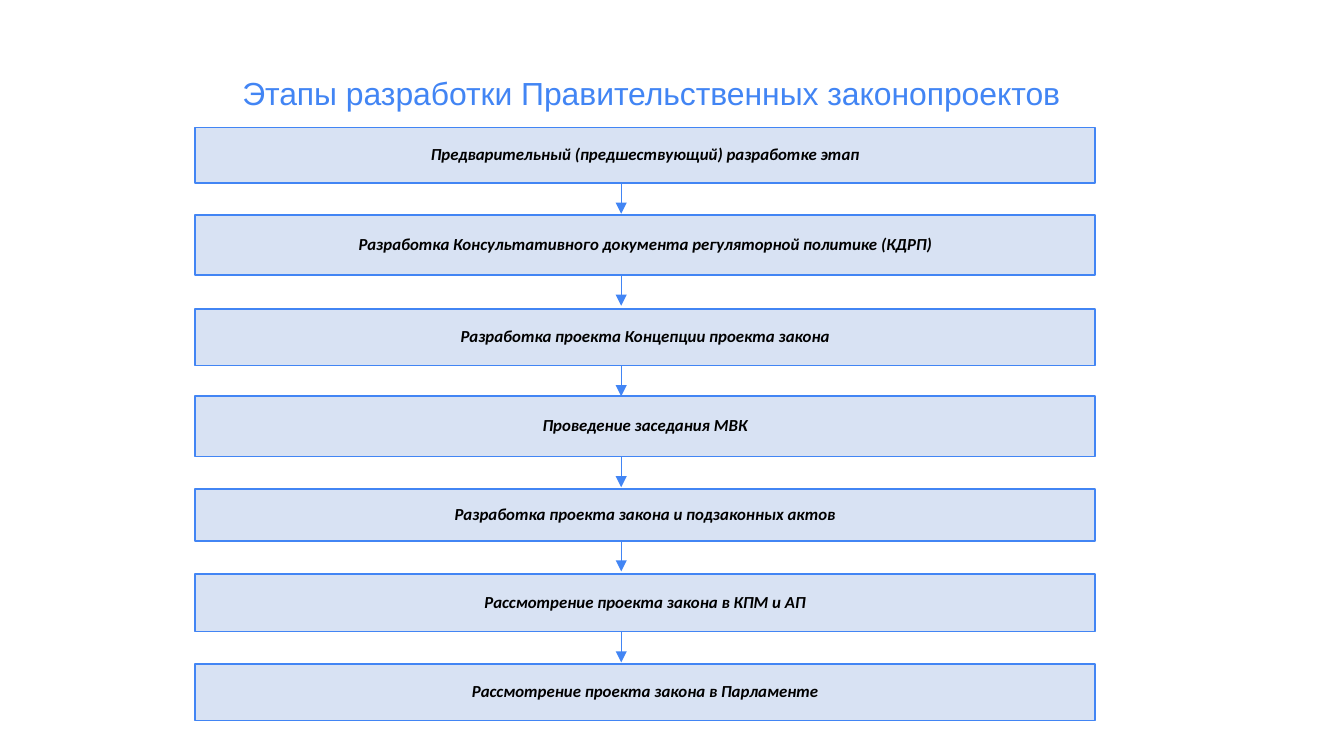
"""Build a slide with the stages of drafting government bills."""
import pptx
import pptx.util
import pptx.dml.color
import pptx.enum.shapes
import pptx.enum.text
import pptx.oxml
from pptx.util import Cm, Pt

TITLE = "Этапы разработки Правительственных законопроектов"
STAGES = [
    ("Предварительный (предшествующий) разработке этап", 2.41, 1.05),
    ("Разработка Консультативного документа регуляторной политике (КДРП)", 4.06, 1.14),
    ("Разработка проекта Концепции проекта закона", 5.84, 1.07),
    ("Проведение заседания МВК", 7.49, 1.14),
    ("Разработка проекта закона и подзаконных актов", 9.25, 0.97),
    ("Рассмотрение проекта закона в КПМ и АП", 10.85, 1.09),
    ("Рассмотрение проекта закона в Парламенте", 12.55, 1.07),
]
COLORS = {"blue": "4285F4", "pale": "D8E2F3", "black": "000000"}
LEFT, WIDTH = 3.68, 17.02
MID, DROP = 11.74, 0.58


def color(name):
    """Return the named colour."""
    return pptx.dml.color.RGBColor.from_string(COLORS[name])


def write(shape, text, anchor, font, size, tint, strong=False):
    """Put one centred line of text in a shape."""
    frame = shape.text_frame
    frame.text = text
    frame.word_wrap = True
    frame.auto_size = pptx.enum.text.MSO_AUTO_SIZE.NONE
    frame.vertical_anchor = anchor
    frame.margin_left = frame.margin_right = Cm(0.18)
    frame.margin_top = frame.margin_bottom = Cm(0.1)
    para = frame.paragraphs[0]
    para.alignment = pptx.enum.text.PP_ALIGN.CENTER
    para.line_spacing = 0.9
    face = para.runs[0].font
    face.name, face.size = font, Pt(size)
    face.bold = face.italic = strong
    face.color.rgb = color(tint)


def add_box(slide, text, top, height):
    """Draw one stage."""
    box = slide.shapes.add_shape(
        pptx.enum.shapes.MSO_SHAPE.RECTANGLE, Cm(LEFT), Cm(top), Cm(WIDTH), Cm(height))
    box.shadow.inherit = False
    box.fill.solid()
    box.fill.fore_color.rgb = color("pale")
    box.line.color.rgb = color("blue")
    box.line.width = Pt(1)
    write(box, text, pptx.enum.text.MSO_ANCHOR.MIDDLE, "Calibri", 9, "black", True)


def add_arrow(slide, top):
    """Draw an arrow down from a stage."""
    arrow = slide.shapes.add_connector(
        pptx.enum.shapes.MSO_CONNECTOR.STRAIGHT, Cm(MID), Cm(top), Cm(MID), Cm(top + DROP))
    arrow.line.color.rgb = color("blue")
    arrow.line.width = Pt(0.75)
    space = pptx.oxml.ns.nsdecls("a")
    line = arrow.line._get_or_add_ln()
    line.append(pptx.oxml.parse_xml(f'<a:tailEnd {space} type="triangle"/>'))
    arrow._element.spPr.append(pptx.oxml.parse_xml(f"<a:effectLst {space}/>"))


def main():
    """Build and save the slide."""
    deck = pptx.Presentation()
    deck.slide_width, deck.slide_height = Cm(25.4), Cm(14.29)
    slide = deck.slides.add_slide(deck.slide_layouts[5])
    title = slide.shapes.title
    title.left, title.top, title.width, title.height = Cm(2.29), Cm(1.37), Cm(20.04), Cm(1.04)
    write(title, TITLE, pptx.enum.text.MSO_ANCHOR.TOP, "Arial", 17.1, "blue")
    for text, top, height in STAGES:
        add_box(slide, text, top, height)
    for _, top, height in STAGES[:-1]:
        add_arrow(slide, top + height)
    deck.save("out.pptx")


if __name__ == "__main__":
    main()
